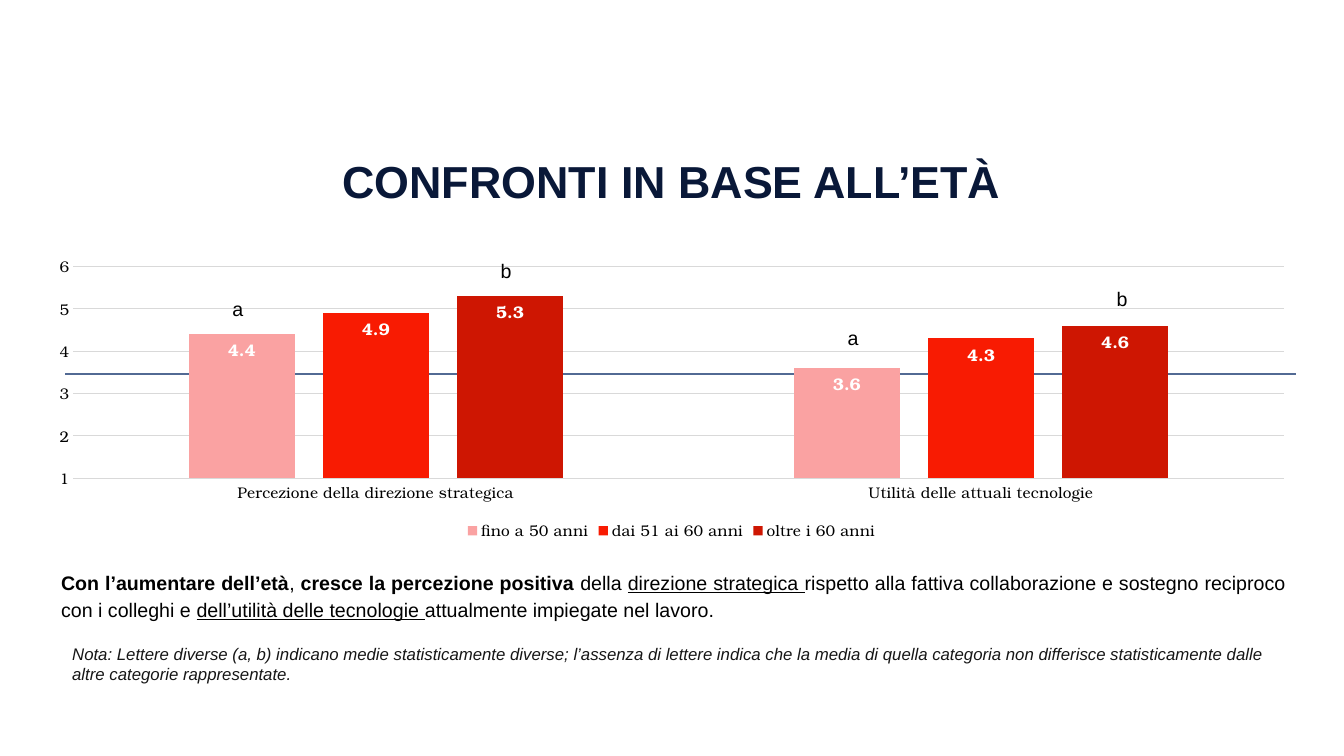
import pptx
import pptx.chart.data
import pptx.dml.color
import pptx.enum.chart
import pptx.enum.shapes
import pptx.enum.text
import pptx.oxml
import pptx.oxml.ns
import pptx.util
from pptx.util import Cm

COLORS = {
    "title": "091838", "text": "000000", "note": "161616", "midline": "526A94",
    "grid": "D9D9D9", "label": "FFFFFF",
    "young": "FAA2A2", "middle": "F81B02", "older": "CE1602",
}
TEXT_FONT = "Arial"
CHART_FONT = "TeX Gyre Bonum"
ALIGN = pptx.enum.text.PP_ALIGN

SCALES = ["Percezione della direzione strategica", "Utilità delle attuali tecnologie"]
AGE_GROUPS = [
    ("fino a 50 anni", (4.4, 3.6), "young"),
    ("dai 51 ai 60 anni", (4.9, 4.3), "middle"),
    ("oltre i 60 anni", (5.3, 4.6), "older"),
]
DIFFERENCE_LETTERS = [("a", 5.61, 7.34), ("b", 12.37, 6.4), ("a", 21.11, 8.08), ("b", 27.89, 7.11)]
FINDING = [
    ("Con l’aumentare dell’età", "bold"),
    (", ", None),
    ("cresce la percezione positiva ", "bold"),
    ("della ", None),
    ("direzione strategica ", "underline"),
    ("rispetto alla fattiva collaborazione e sostegno reciproco con i colleghi e ", None),
    ("dell’utilità delle tecnologie ", "underline"),
    ("attualmente impiegate nel lavoro.", None),
]
NOTE = ("Nota: Lettere diverse (a, b) indicano medie statisticamente diverse; "
        "l’assenza di lettere indica che la media di quella categoria non differisce "
        "statisticamente dalle altre categorie rappresentate.")


def rgb(name):
    return pptx.dml.color.RGBColor.from_string(COLORS[name])


def style_font(font, name, size, color, emphasis=None):
    """Emphasis is the font attribute to switch on: bold, italic or underline."""
    font.name = name
    font.size = pptx.util.Pt(size)
    font.color.rgb = rgb(color)
    if emphasis:
        setattr(font, emphasis, True)


def style_line(line, color, width):
    line.color.rgb = rgb(color)
    line.width = pptx.util.Pt(width)


def add_text(slide, left, top, width, height, runs, size, color="text",
             wrap=True, grow=False, inset=0.13):
    """Add a one-paragraph box from (text, emphasis) runs; return frame and paragraph."""
    frame = slide.shapes.add_textbox(Cm(left), Cm(top), Cm(width), Cm(height)).text_frame
    frame.word_wrap = wrap
    frame.margin_left = frame.margin_right = Cm(0.25)
    frame.margin_top = frame.margin_bottom = Cm(inset)
    if grow:
        frame.auto_size = pptx.enum.text.MSO_AUTO_SIZE.SHAPE_TO_FIT_TEXT
    paragraph = frame.paragraphs[0]
    for text, emphasis in runs:
        run = paragraph.add_run()
        run.text = text
        style_font(run.font, TEXT_FONT, size, color, emphasis)
    return frame, paragraph


def add_midline(slide):
    """Mark the midpoint of the rating scale."""
    midline = slide.shapes.add_connector(
        pptx.enum.shapes.MSO_CONNECTOR.STRAIGHT, Cm(1.65), Cm(9.42), Cm(32.66), Cm(9.42))
    style_line(midline.line, "midline", 1.5)
    effects = pptx.oxml.parse_xml("<a:effectLst %s/>" % pptx.oxml.ns.nsdecls("a"))
    midline._element.spPr.append(effects)


def clear_background(chart):
    """Make the chart see-through, so that the midline shows behind the bars."""
    xml = "<c:spPr %s><a:noFill/><a:ln><a:noFill/></a:ln></c:spPr>" % pptx.oxml.ns.nsdecls("c", "a")
    chart_element = chart._chartSpace.chart
    chart_element.addnext(pptx.oxml.parse_xml(xml))
    chart_element.plotArea.append(pptx.oxml.parse_xml(xml))


def style_axes(chart):
    scores = chart.value_axis
    scores.minimum_scale, scores.maximum_scale, scores.major_unit = 1, 6, 1
    scores.format.line.fill.background()
    scores.has_major_gridlines = True
    style_line(scores.major_gridlines.format.line, "grid", 0.75)
    style_line(chart.category_axis.format.line, "grid", 0.75)
    for axis in (scores, chart.category_axis):
        axis.major_tick_mark = pptx.enum.chart.XL_TICK_MARK.NONE
        axis.minor_tick_mark = pptx.enum.chart.XL_TICK_MARK.NONE
        style_font(axis.tick_labels.font, CHART_FONT, 11, "text")


def add_age_chart(slide):
    data = pptx.chart.data.CategoryChartData()
    data.categories = SCALES
    for name, means, _ in AGE_GROUPS:
        data.add_series(name, means)
    chart = slide.shapes.add_chart(
        pptx.enum.chart.XL_CHART_TYPE.COLUMN_CLUSTERED,
        Cm(0.86), Cm(6.3), Cm(32.13), Cm(7.44), data).chart
    chart.has_title = False
    style_font(chart.font, CHART_FONT, 10, "text")
    chart.has_legend = True
    chart.legend.position = pptx.enum.chart.XL_LEGEND_POSITION.BOTTOM
    chart.legend.include_in_layout = False
    style_font(chart.legend.font, CHART_FONT, 11, "text")
    style_axes(chart)

    plot = chart.plots[0]
    plot.vary_by_categories = False
    plot.gap_width, plot.overlap = 219, -27
    for series, (_, _, color) in zip(plot.series, AGE_GROUPS):
        series.format.fill.solid()
        series.format.fill.fore_color.rgb = rgb(color)
        labels = series.data_labels
        labels.show_value = True
        labels.number_format = "#,##0.0"
        labels.number_format_is_linked = False
        labels.position = pptx.enum.chart.XL_LABEL_POSITION.INSIDE_END
        style_font(labels.font, CHART_FONT, 12, "label", "bold")
    clear_background(chart)


def main():
    deck = pptx.Presentation()
    deck.slide_width, deck.slide_height = Cm(33.87), Cm(19.05)
    slide = deck.slides.add_slide(deck.slide_layouts[6])

    frame, title = add_text(slide, 7.75, 3.68, 18.36, 1.98,
                            [("CONFRONTI IN BASE ALL’ETÀ", "bold")], 32, "title", inset=0.25)
    frame.vertical_anchor = pptx.enum.text.MSO_ANCHOR.MIDDLE
    title.alignment = ALIGN.CENTER
    title.line_spacing = 0.85

    add_midline(slide)
    add_age_chart(slide)
    for letter, left, top in DIFFERENCE_LETTERS:
        add_text(slide, left, top, 1.24, 0.91, [(letter, None)], 14, wrap=False, grow=True)

    _, finding = add_text(slide, 0.86, 14.05, 31.8, 2.62, FINDING, 14, inset=0.25)
    finding.alignment = ALIGN.JUSTIFY
    finding.line_spacing = 1.15
    indent = finding._p.get_or_add_pPr()
    indent.set("marL", str(Cm(0.43)))
    indent.set("indent", "0")

    add_text(slide, 1.57, 16.08, 31.06, 1.27, [(NOTE, "italic")], 12, "note", grow=True)
    deck.save("out.pptx")


if __name__ == "__main__":
    main()
